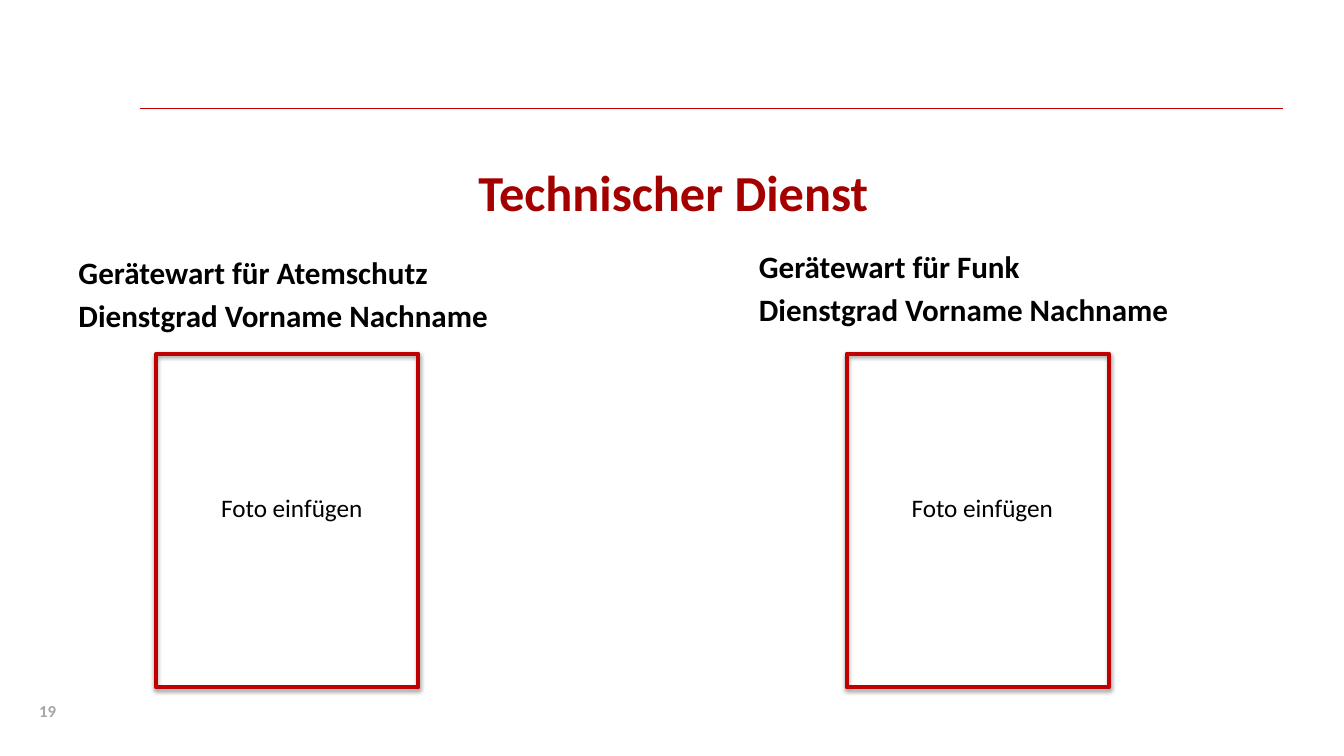
from lxml import etree
from pptx import Presentation
from pptx.dml.color import RGBColor
from pptx.enum import shapes, text
from pptx.oxml import ns
from pptx.util import Pt

FONT = "Calibri"
RED = "C00000"
BLACK = "000000"


def color(hex_value):
    return RGBColor.from_string(hex_value)


def place(shape, left, top, width, height):
    shape.left, shape.top = Pt(left), Pt(top)
    shape.width, shape.height = Pt(width), Pt(height)


def write(shape, lines, size=18, fill=BLACK, bold=False, wrap=True, gap=0,
          align=text.PP_ALIGN.LEFT, anchor=text.MSO_ANCHOR.TOP):
    frame = shape.text_frame
    frame.word_wrap = wrap
    frame.vertical_anchor = anchor
    frame.text = "\n".join(lines)
    for index, paragraph in enumerate(frame.paragraphs):
        paragraph.alignment = align
        paragraph.space_before = Pt(gap if index else 0)
        font = paragraph.font
        font.name, font.size, font.bold = FONT, Pt(size), bold
        font.color.rgb = color(fill)


def add_text(slide, box, lines, **style):
    shape = slide.shapes.add_textbox(*map(Pt, box))
    write(shape, lines, **style)


def add_rule(slide, left, right, y):
    line = slide.shapes.add_connector(
        shapes.MSO_CONNECTOR.STRAIGHT, Pt(right), Pt(y), Pt(left), Pt(y))
    line.line.color.rgb = color(RED)
    line.line.width = Pt(0.75)
    etree.SubElement(line._element.spPr, ns.qn("a:effectLst"))


def add_photo_frame(slide, box):
    frame = slide.shapes.add_shape(shapes.MSO_SHAPE.RECTANGLE, *map(Pt, box))
    frame.fill.background()
    frame.line.color.rgb = color(RED)
    frame.line.width = Pt(3)
    # Soft shadow straight below
    frame.shadow.inherit = False
    effects = frame._element.spPr.find(ns.qn("a:effectLst"))
    shadow = etree.SubElement(
        effects, ns.qn("a:outerShdw"), blurRad=str(Pt(3.1)),
        dist=str(Pt(1.6)), dir="5400000", rotWithShape="0")
    tone = etree.SubElement(shadow, ns.qn("a:srgbClr"), val=BLACK)
    etree.SubElement(tone, ns.qn("a:alpha"), val="38000")


def add_person(slide, role, heading_left, heading_top, frame_left):
    add_text(slide, (heading_left, heading_top, 424, 57),
             [role, "Dienstgrad Vorname Nachname"], size=22.2, bold=True,
             gap=4.4, anchor=text.MSO_ANCHOR.BOTTOM)
    add_text(slide, (frame_left + 39.2, 347.8, 116.6, 29),
             ["Foto einfügen"], wrap=False)
    add_photo_frame(slide, (frame_left, 252.7, 187.2, 238.3))


def main():
    presentation = Presentation()
    presentation.slide_width, presentation.slide_height = Pt(960), Pt(540)
    slide = presentation.slides.add_slide(presentation.slide_layouts[5])

    # Header rule and page number
    add_rule(slide, 100, 916.5, 77.2)
    add_text(slide, (20.9, 497, 187, 22), ["19"], size=12, fill="A6A6A6",
             bold=True)

    # Title
    title = slide.shapes.title
    place(title, 49, 100, 864, 73.4)
    write(title, ["Technischer Dienst"], size=36, fill="A40000", bold=True,
          align=text.PP_ALIGN.CENTER, anchor=text.MSO_ANCHOR.MIDDLE)

    # People with photo frames
    add_person(slide, "Gerätewart für Atemschutz", 49, 185, 111.6)
    add_person(slide, "Gerätewart für Funk", 535, 180.7, 604.8)

    presentation.save("out.pptx")


if __name__ == "__main__":
    main()
